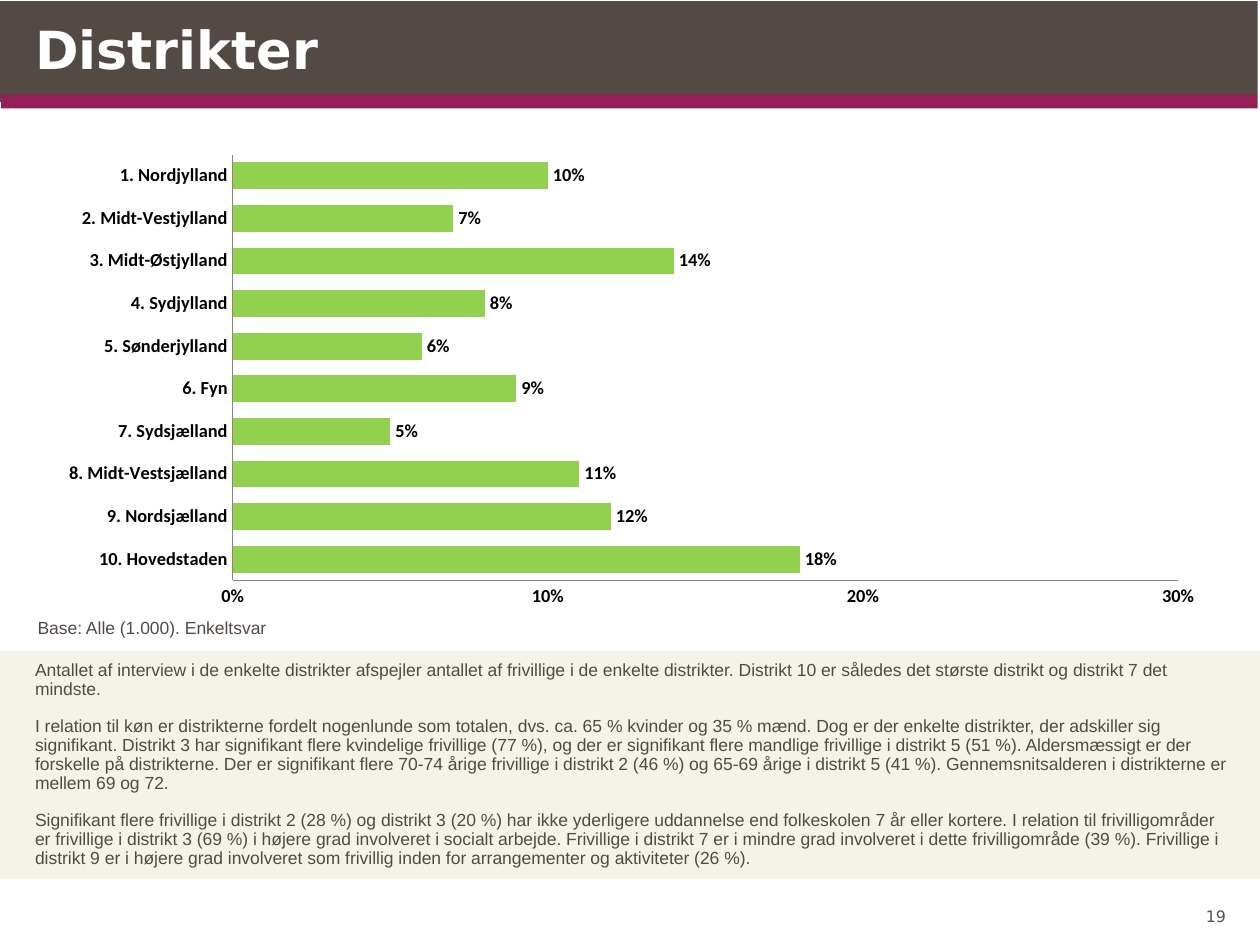
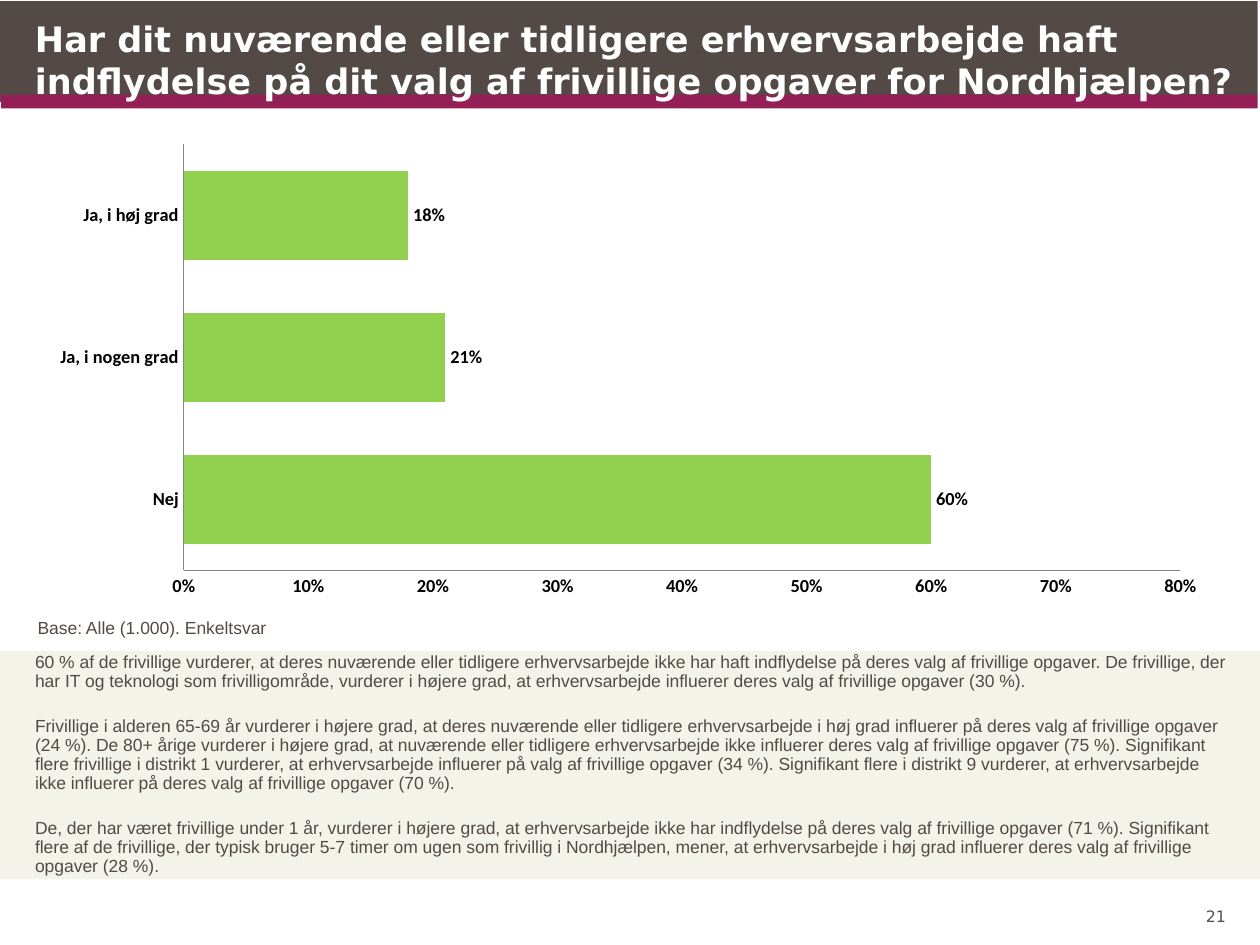
from dataclasses import dataclass

import pptx
import pptx.chart.data
import pptx.dml.color
import pptx.enum.chart
import pptx.enum.shapes
import pptx.enum.text
import pptx.oxml
import pptx.oxml.ns
import pptx.util

Pt = pptx.util.Pt
RGBColor = pptx.dml.color.RGBColor
PP_ALIGN = pptx.enum.text.PP_ALIGN
MSO_ANCHOR = pptx.enum.text.MSO_ANCHOR

BROWN = RGBColor(0x53, 0x4A, 0x46)
PLUM = RGBColor(0x94, 0x1F, 0x57)
CREAM = RGBColor(0xF3, 0xF3, 0xE9)
GREEN = RGBColor(0x92, 0xD0, 0x50)
GREY = RGBColor(0x50, 0x50, 0x50)
AXIS_GREY = RGBColor(0x86, 0x86, 0x86)
WHITE = RGBColor(0xFF, 0xFF, 0xFF)
BLACK = RGBColor(0, 0, 0)

HEADING_FONT = "DejaVu Sans"
BODY_FONT = "Arial"
CHART_FONT = "Calibri"
BASE_NOTE = "Base: Alle (1.000). Enkeltsvar"


@dataclass(frozen=True)
class Box:
    left: float
    top: float
    width: float
    height: float

    def lengths(self) -> tuple:
        return Pt(self.left), Pt(self.top), Pt(self.width), Pt(self.height)


@dataclass(frozen=True)
class Band:
    box: Box
    color: RGBColor


@dataclass(frozen=True)
class TextStyle:
    font: str
    size: float
    color: RGBColor
    bold: bool = False
    align: PP_ALIGN = PP_ALIGN.LEFT
    anchor: MSO_ANCHOR = MSO_ANCHOR.TOP
    line_spacing: float = 1.0
    gap: float = 0
    inset_x: float = 0
    inset_y: float = 0


@dataclass(frozen=True)
class Survey:
    title: str
    title_size: float
    title_width: float
    page: int
    answers: dict[str, float]
    axis_max: float
    chart_box: Box
    plot_left: float
    plot_width: float
    findings: list[str]
    findings_gap: float


COMMENT_BOX = Box(20, 372, 680.4, 130.4)
BASE_BOX = Box(14.4, 349.2, 221, 19.4)
PAGE_BOX = Box(672.5, 499.7, 28, 29.5)
BANDS = [
    Band(Box(0, 0.7, 719, 57.6), BROWN),
    Band(Box(0.7, 54, 718.5, 7.9), PLUM),
    Band(Box(718.6, 0, 1.4, 540), WHITE),
    Band(Box(0, 538.6, 720, 1.4), WHITE),
    Band(Box(0, 372, 720, 130.4), CREAM),
]

SURVEYS = [
    Survey(
        title="Distrikter",
        title_size=30,
        title_width=680.4,
        page=19,
        answers={
            "10. Hovedstaden": 0.18,
            "9. Nordsjælland": 0.12,
            "8. Midt-Vestsjælland": 0.11,
            "7. Sydsjælland": 0.05,
            "6. Fyn": 0.09,
            "5. Sønderjylland": 0.06,
            "4. Sydjylland": 0.08,
            "3. Midt-Østjylland": 0.14,
            "2. Midt-Vestjylland": 0.07,
            "1. Nordjylland": 0.1,
        },
        axis_max=0.3,
        chart_box=Box(19.4, 82.8, 680.4, 277.9),
        plot_left=0.167,
        plot_width=0.794,
        findings=[
            "Antallet af interview i de enkelte distrikter afspejler antallet af frivillige i de enkelte "
            "distrikter. Distrikt 10 er således det største distrikt og distrikt 7 det mindste.",
            "I relation til køn er distrikterne fordelt nogenlunde som totalen, dvs. ca. 65 % kvinder og "
            "35 % mænd. Dog er der enkelte distrikter, der adskiller sig signifikant. Distrikt 3 har "
            "signifikant flere kvindelige frivillige (77 %), og der er signifikant flere mandlige "
            "frivillige i distrikt 5 (51 %). Aldersmæssigt er der forskelle på distrikterne. Der er "
            "signifikant flere 70-74 årige frivillige i distrikt 2 (46 %) og 65-69 årige i distrikt 5 "
            "(41 %). Gennemsnitsalderen i distrikterne er mellem 69 og 72.",
            "Signifikant flere frivillige i distrikt 2 (28 %) og distrikt 3 (20 %) har ikke yderligere "
            "uddannelse end folkeskolen 7 år eller kortere. I relation til frivilligområder er "
            "frivillige i distrikt 3 (69 %) i højere grad involveret i socialt arbejde. Frivillige i "
            "distrikt 7 er i mindre grad involveret i dette frivilligområde (39 %). Frivillige i "
            "distrikt 9 er i højere grad involveret som frivillig inden for arrangementer og "
            "aktiviteter (26 %).",
        ],
        findings_gap=10.5,
    ),
    Survey(
        title="Har dit nuværende eller tidligere erhvervsarbejde haft indflydelse på dit valg af "
        "frivillige opgaver for Nordhjælpen?",
        title_size=20,
        title_width=692,
        page=21,
        answers={"Nej": 0.6, "Ja, i nogen grad": 0.21, "Ja, i høj grad": 0.18},
        axis_max=0.8,
        chart_box=Box(20, 77, 680.4, 277.9),
        plot_left=0.125,
        plot_width=0.837,
        findings=[
            "60 % af de frivillige vurderer, at deres nuværende eller tidligere erhvervsarbejde ikke har "
            "haft indflydelse på deres valg af frivillige opgaver. De frivillige, der har IT og "
            "teknologi som frivilligområde, vurderer i højere grad, at erhvervsarbejde influerer deres "
            "valg af frivillige opgaver (30 %).",
            "Frivillige i alderen 65-69 år vurderer i højere grad, at deres nuværende eller tidligere "
            "erhvervsarbejde i høj grad influerer på deres valg af frivillige opgaver (24 %). De 80+ "
            "årige vurderer i højere grad, at nuværende eller tidligere erhvervsarbejde ikke influerer "
            "deres valg af frivillige opgaver (75 %). Signifikant flere frivillige i distrikt 1 "
            "vurderer, at erhvervsarbejde influerer på valg af frivillige opgaver (34 %). Signifikant "
            "flere i distrikt 9 vurderer, at erhvervsarbejde ikke influerer på deres valg af frivillige "
            "opgaver (70 %).",
            "De, der har været frivillige under 1 år, vurderer i højere grad, at erhvervsarbejde ikke "
            "har indflydelse på deres valg af frivillige opgaver (71 %). Signifikant flere af de "
            "frivillige, der typisk bruger 5-7 timer om ugen som frivillig i Nordhjælpen, mener, at "
            "erhvervsarbejde i høj grad influerer deres valg af frivillige opgaver (28 %).",
        ],
        findings_gap=15,
    ),
]


def add_band(slide, band: Band) -> None:
    bar = slide.shapes.add_shape(pptx.enum.shapes.MSO_SHAPE.RECTANGLE, *band.box.lengths())
    bar.shadow.inherit = False
    bar.fill.solid()
    bar.fill.fore_color.rgb = band.color
    bar.line.fill.background()


def style_font(font, name: str, size: float, color: RGBColor, bold: bool) -> None:
    font.name = name
    font.size = Pt(size)
    font.color.rgb = color
    font.bold = bold


def add_text(slide, box: Box, paragraphs: list[str], style: TextStyle) -> None:
    frame = slide.shapes.add_textbox(*box.lengths()).text_frame
    frame.word_wrap = True
    frame.vertical_anchor = style.anchor
    frame.margin_left = frame.margin_right = Pt(style.inset_x)
    frame.margin_top = frame.margin_bottom = Pt(style.inset_y)
    frame.text = "\n".join(paragraphs)
    for index, paragraph in enumerate(frame.paragraphs):
        paragraph.alignment = style.align
        paragraph.line_spacing = style.line_spacing
        if index:
            paragraph.space_before = Pt(style.gap)
        for run in paragraph.runs:
            style_font(run.font, style.font, style.size, style.color, style.bold)


def place_plot(chart, left: float, width: float) -> None:
    plot_area = chart.element.xpath(".//c:plotArea")[0]
    for layout in plot_area.findall(pptx.oxml.ns.qn("c:layout")):
        plot_area.remove(layout)
    places = {"x": left, "y": 0.02, "w": width, "h": 0.876}
    values = "".join(f'<c:{key} val="{value}"/>' for key, value in places.items())
    plot_area.insert(0, pptx.oxml.parse_xml(
        f'<c:layout {pptx.oxml.ns.nsdecls("c")}><c:manualLayout><c:layoutTarget val="inner"/>'
        f'<c:xMode val="edge"/><c:yMode val="edge"/>{values}</c:manualLayout></c:layout>'
    ))


def add_answers(slide, survey: Survey) -> None:
    data = pptx.chart.data.CategoryChartData(number_format="0%")
    data.categories = list(survey.answers)
    data.add_series("Series 1", list(survey.answers.values()))
    chart = slide.shapes.add_chart(
        pptx.enum.chart.XL_CHART_TYPE.BAR_CLUSTERED, *survey.chart_box.lengths(), data
    ).chart
    chart.has_title = False
    chart.has_legend = False
    style_font(chart.font, CHART_FONT, 10, BLACK, False)

    for axis in (chart.category_axis, chart.value_axis):
        axis.has_major_gridlines = False
        axis.major_tick_mark = axis.minor_tick_mark = pptx.enum.chart.XL_TICK_MARK.NONE
        axis.format.line.color.rgb = AXIS_GREY
        axis.format.line.width = Pt(0.75)
        style_font(axis.tick_labels.font, CHART_FONT, 10.5, BLACK, True)
    scale = chart.value_axis
    scale.minimum_scale = 0
    scale.maximum_scale = survey.axis_max
    scale.major_unit = 0.1
    scale.tick_labels.number_format = "0%"
    scale.tick_labels.number_format_is_linked = False

    bars = chart.plots[0]
    bars.vary_by_categories = False
    bars.gap_width = 59
    bars.overlap = -45
    bars.series[0].format.fill.solid()
    bars.series[0].format.fill.fore_color.rgb = GREEN
    bars.has_data_labels = True
    labels = bars.data_labels
    labels.show_value = True
    labels.number_format = "0%"
    labels.number_format_is_linked = False
    labels.position = pptx.enum.chart.XL_LABEL_POSITION.OUTSIDE_END
    style_font(labels.font, CHART_FONT, 10.5, BLACK, True)
    place_plot(chart, survey.plot_left, survey.plot_width)


def add_survey(deck, survey: Survey) -> None:
    slide = deck.slides.add_slide(deck.slide_layouts[6])
    for band in BANDS:
        add_band(slide, band)
    add_text(slide, PAGE_BOX, [str(survey.page)],
             TextStyle(HEADING_FONT, 9, GREY, align=PP_ALIGN.RIGHT, anchor=MSO_ANCHOR.BOTTOM))
    add_text(slide, Box(20, 10, survey.title_width, 51), [survey.title],
             TextStyle(HEADING_FONT, survey.title_size, WHITE, bold=True))
    add_text(slide, COMMENT_BOX, survey.findings,
             TextStyle(BODY_FONT, 10, BROWN, anchor=MSO_ANCHOR.MIDDLE, line_spacing=0.9,
                       gap=survey.findings_gap))
    add_answers(slide, survey)
    add_text(slide, BASE_BOX, [BASE_NOTE], TextStyle(BODY_FONT, 10, BROWN, inset_x=7.2, inset_y=3.6))


def main() -> None:
    deck = pptx.Presentation()
    deck.slide_width = Pt(720)
    deck.slide_height = Pt(540)
    for survey in SURVEYS:
        add_survey(deck, survey)
    deck.save("out.pptx")


if __name__ == "__main__":
    main()
